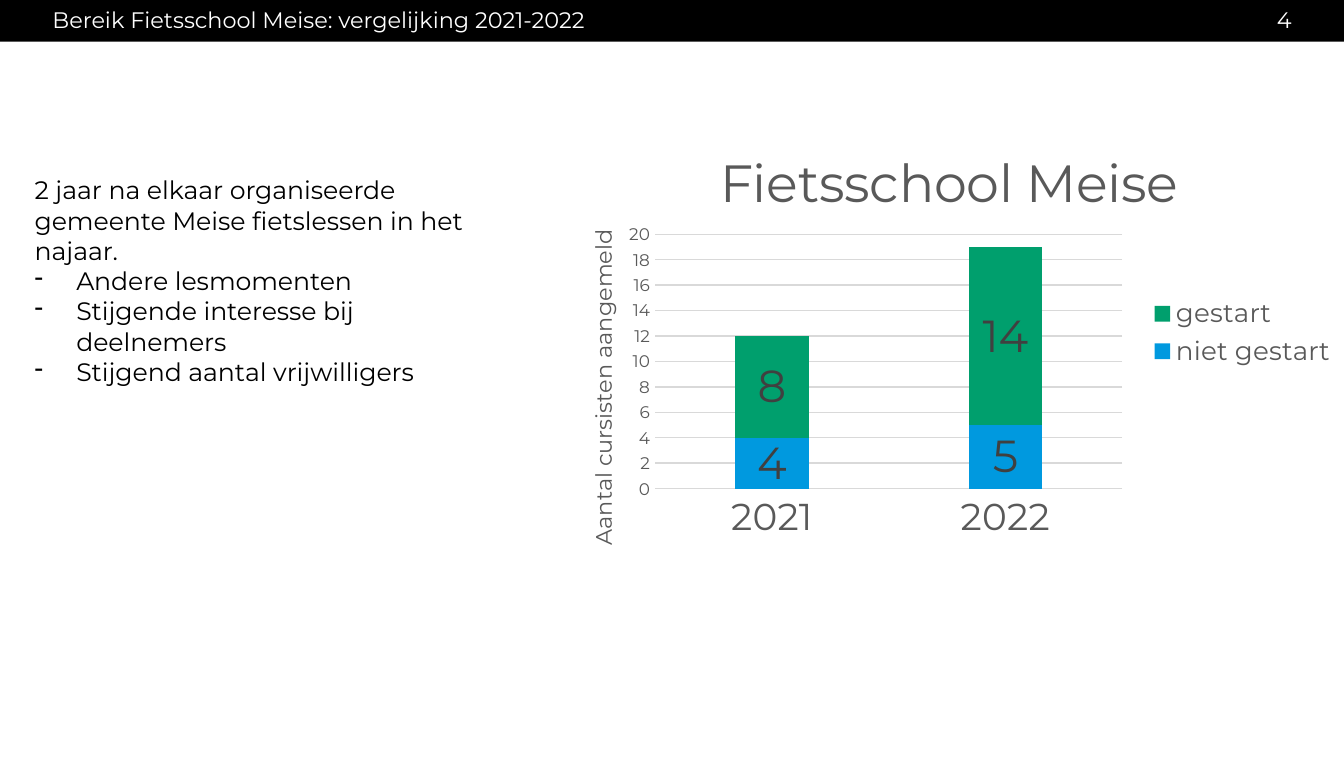
"""Build the slide that compares the reach of the cycling school in 2021 and 2022."""
from dataclasses import dataclass

from lxml import etree
from pptx import Presentation
from pptx.chart.data import CategoryChartData
from pptx.dml.color import RGBColor
from pptx.enum import chart as kinds, shapes, text
from pptx.oxml.ns import qn
from pptx.util import Inches, Pt

FONT = "Montserrat"
HUES = {"black": "000000", "white": "FFFFFF", "grey": "595959", "dark": "404040",
        "grid": "D9D9D9", "blue": "0099DF", "green": "009F6D"}


@dataclass
class Label:
    lines: list[str]
    box: tuple[float, float, float, float]
    size: float
    hue: str
    align: text.PP_ALIGN = text.PP_ALIGN.LEFT


@dataclass
class Series:
    name: str
    vals: tuple[int, ...]
    hue: str


HEADS = [
    Label(["Bereik Fietsschool Meise: vergelijking 2021-2022"], (0.39, 0, 8.62, 0.31), 12, "white"),
    Label(["4"], (7.29, 0, 2.32, 0.31), 12, "white", text.PP_ALIGN.RIGHT),
]
BODY = Label(["2 jaar na elkaar organiseerde gemeente Meise fietslessen in het najaar.",
              "Andere lesmomenten", "Stijgende interesse bij deelnemers",
              "Stijgend aantal vrijwilligers"], (0.16, 1.25, 3.5, 1.92), 13.5, "black")
STACK = [Series("niet gestart", (4, 5), "blue"), Series("gestart", (8, 14), "green")]


def color(hue: str) -> RGBColor:
    """Return the named colour."""
    return RGBColor.from_string(HUES[hue])


def style(font, size: float, hue: str) -> None:
    """Set face, size and colour of a font."""
    font.name, font.size, font.bold = FONT, Pt(size), False
    font.color.rgb = color(hue)


def write(slide, label: Label):
    """Add a text box and return its frame."""
    frame = slide.shapes.add_textbox(*map(Inches, label.box)).text_frame
    frame.word_wrap = True
    frame.text = "\n".join(label.lines)
    for para in frame.paragraphs:
        para.alignment = label.align
        for run in para.runs:
            style(run.font, label.size, label.hue)
    return frame


def draw_head(slide, label: Label) -> None:
    """Add a label without margins in the top bar."""
    frame = write(slide, label)
    frame.margin_left = frame.margin_right = frame.margin_top = frame.margin_bottom = 0
    frame.vertical_anchor = text.MSO_ANCHOR.MIDDLE
    frame.paragraphs[0].line_spacing = 0.9


def draw_body(slide, label: Label) -> None:
    """Add the intro with its dashed list."""
    frame = write(slide, label)
    frame.auto_size = text.MSO_AUTO_SIZE.SHAPE_TO_FIT_TEXT
    for para in frame.paragraphs[1:]:
        props = para._p.get_or_add_pPr()
        props.set("marL", str(Inches(0.31)))
        props.set("indent", str(-Inches(0.31)))
        etree.SubElement(props, qn("a:buFontTx"))
        etree.SubElement(props, qn("a:buChar")).set("char", "-")


def place(part, index: int, inner: bool = False, **spots: float) -> None:
    """Fix a chart part at fractions of the chart size."""
    for old in part.findall(qn("c:layout")):
        part.remove(old)
    layout = etree.Element(qn("c:layout"))
    manual = etree.SubElement(layout, qn("c:manualLayout"))
    if inner:
        etree.SubElement(manual, qn("c:layoutTarget")).set("val", "inner")
    for mode in ("xMode", "yMode"):
        etree.SubElement(manual, qn(f"c:{mode}")).set("val", "edge")
    for key, spot in spots.items():
        etree.SubElement(manual, qn(f"c:{key}")).set("val", str(spot))
    part.insert(index, layout)


def set_title(title, words: str, size: float, x: float, y: float) -> None:
    """Write and place a chart or axis title."""
    title.text_frame.text = words
    style(title.text_frame.paragraphs[0].runs[0].font, size, "grey")
    place(title._element, 1, x=x, y=y)


def draw_chart(slide) -> None:
    """Add the stacked column chart."""
    data = CategoryChartData()
    data.categories = ["2021", "2022"]
    for item in STACK:
        data.add_series(item.name, item.vals)
    box = map(Inches, (4.11, 0.78, 5.89, 3.32))
    chart = slide.shapes.add_chart(kinds.XL_CHART_TYPE.COLUMN_STACKED, *box, data).chart
    style(chart.font, 10, "black")
    chart.has_title = True
    set_title(chart.chart_title, "Fietsschool Meise", 28, 0.2, 0.07)

    plot = chart.plots[0]
    plot.gap_width, plot.overlap, plot.vary_by_categories = 219, 100, False
    for series, item in zip(plot.series, STACK):
        series.format.fill.solid()
        series.format.fill.fore_color.rgb = color(item.hue)
        labels = series.data_labels
        labels.show_value = True
        labels.position = kinds.XL_LABEL_POSITION.CENTER
        style(labels.font, 24, "dark")

    years, count = chart.category_axis, chart.value_axis
    for axis, size in ((years, 20), (count, 9)):
        axis.major_tick_mark = axis.minor_tick_mark = kinds.XL_TICK_MARK.NONE
        style(axis.tick_labels.font, size, "grey")
    count.minimum_scale, count.maximum_scale, count.major_unit = 0, 20, 2
    count.format.line.fill.background()
    for line in (years.format.line, count.major_gridlines.format.line):
        line.color.rgb = color("grid")
        line.width = Pt(0.75)
    set_title(count.axis_title, "Aantal cursisten aangemeld", 12, 0.04, 0.27)

    chart.has_legend = True
    chart.legend.position = kinds.XL_LEGEND_POSITION.RIGHT
    chart.legend.include_in_layout = False
    style(chart.legend.font, 14, "grey")
    place(chart.legend._element, 1, x=0.75, y=0.42)
    area = chart._chartSpace.find(f".//{qn('c:plotArea')}")
    place(area, 0, True, x=0.13, y=0.29, w=0.59, h=0.57)


def main() -> None:
    """Build and save the slide."""
    deck = Presentation()
    deck.slide_width, deck.slide_height = Inches(10), Inches(5.63)
    slide = deck.slides.add_slide(deck.slide_layouts[6])
    slide.background.fill.solid()
    slide.background.fill.fore_color.rgb = color("black")
    page = slide.shapes.add_shape(shapes.MSO_SHAPE.RECTANGLE,
                                  *map(Inches, (0, 0.31, 10, 5.32)))
    page.shadow.inherit = False
    page.fill.solid()
    page.fill.fore_color.rgb = color("white")
    page.line.fill.background()
    for label in HEADS:
        draw_head(slide, label)
    draw_chart(slide)
    draw_body(slide, BODY)
    deck.save("out.pptx")


if __name__ == "__main__":
    main()
